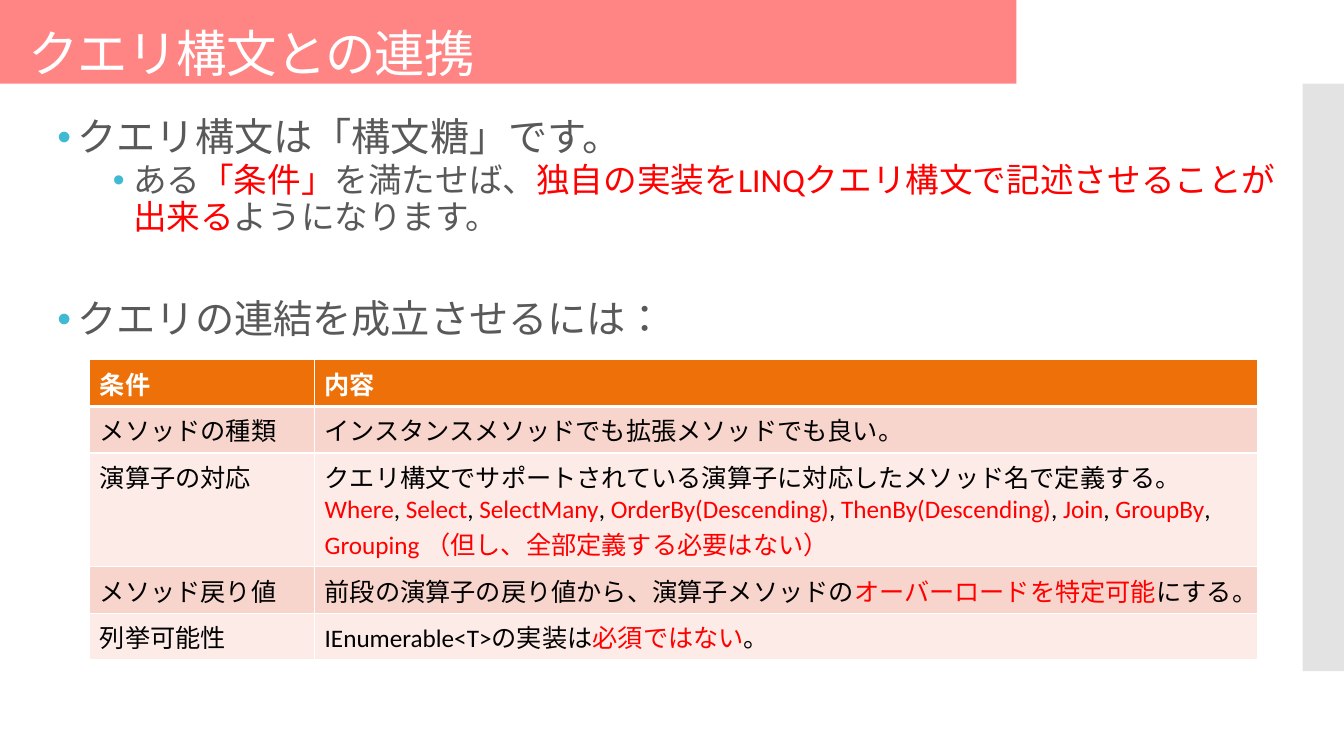
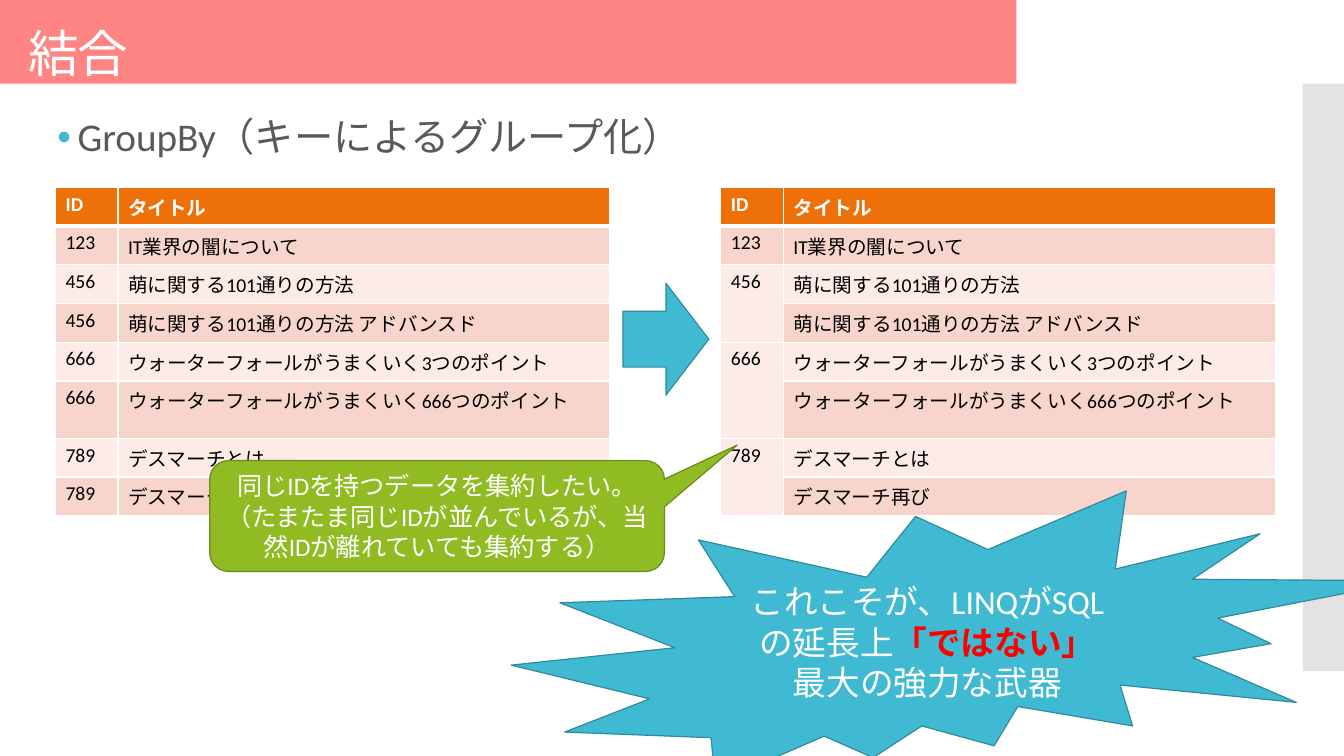
from pptx import Presentation
from pptx.dml.color import RGBColor
from pptx.enum.shapes import MSO_SHAPE
from pptx.enum.text import MSO_ANCHOR, MSO_AUTO_SIZE, PP_ALIGN
from pptx.oxml.ns import qn
from pptx.util import Emu, Pt
from lxml.etree import SubElement

EMU_PER_PX = 9144
FONT = "Calibri"
COLORS = {
    "white": "FFFFFF",
    "black": "000000",
    "text": "595959",
    "red": "FF0000",
    "band": "FF8585",
    "side": "C8C8C8",
    "header": "EE7008",
    "odd_row": "F8D5CC",
    "even_row": "FCEBE7",
    "blue": "40BAD2",
    "blue_line": "2F8A9B",
    "green": "90BB23",
    "green_line": "6B8A1A",
}
BULLETS = [
    {"size": 28, "margin": 20, "before": 12, "after": 0},
    {"size": 24, "margin": 75, "before": 2.5, "after": 2.5},
]
HANGING = 20

CONDITIONS = [
    ("条件", "内容"),
    ("メソッドの種類", "インスタンスメソッドでも拡張メソッドでも良い。"),
    ("演算子の対応",
     "クエリ構文でサポートされている演算子に対応したメソッド名で定義する。\n"
     "|Where|, |Select|, |SelectMany|, |OrderBy(Descending)|, "
     "|ThenBy(Descending)|, |Join|, |GroupBy|, "
     "|Grouping （但し、全部定義する必要はない）"),
    ("メソッド戻り値",
     "前段の演算子の戻り値から、演算子メソッドの|オーバーロードを特定可能|にする。"),
    ("列挙可能性", "IEnumerable<T>の実装は|必須ではない|。"),
]
BOOKS = [
    ("ID", "タイトル"),
    ("123", "IT業界の闇について"),
    ("456", "萌に関する101通りの方法"),
    ("456", "萌に関する101通りの方法 アドバンスド"),
    ("666", "ウォーターフォールがうまくいく3つのポイント"),
    ("666", "ウォーターフォールがうまくいく666つのポイント"),
    ("789", "デスマーチとは"),
    ("789", "デスマーチ再び"),
]


def px(length):
    return Emu(length * EMU_PER_PX)


def rgb(name):
    return RGBColor.from_string(COLORS[name])


def apply(target, formats):
    for name, value in formats.items():
        setattr(target, name, value)


def place(shape, box):
    apply(shape, dict(zip(("left", "top", "width", "height"), map(px, box))))


def write(paragraph, text, size, color, bold=False, red_bold=False):
    for index, part in enumerate(text.split("|")):
        is_red = index % 2 == 1
        for line_index, line in enumerate(part.split("\n")):
            if line_index:
                paragraph.add_line_break()
            if not line:
                continue
            run = paragraph.add_run()
            run.text = line
            apply(run.font, {"name": FONT, "size": Pt(size),
                             "bold": red_bold if is_red else bold})
            run.font.color.rgb = rgb("red" if is_red else color)
            run.font._element.set("lang", "ja-JP")


def add_shape(slide, kind, box, fill, line=None):
    shape = slide.shapes.add_shape(kind, *map(px, box))
    shape.shadow.inherit = False
    shape.fill.solid()
    shape.fill.fore_color.rgb = rgb(fill)
    if line:
        shape.line.color.rgb = rgb(line)
        shape.line.width = Pt(0.85)
    else:
        shape.line.fill.background()
    return shape


def add_label(shape, lines, size):
    frame = shape.text_frame
    apply(frame, {"word_wrap": True, "vertical_anchor": MSO_ANCHOR.MIDDLE})
    for index, line in enumerate(lines):
        paragraph = frame.add_paragraph() if index else frame.paragraphs[0]
        paragraph.alignment = PP_ALIGN.CENTER
        write(paragraph, line, size, "white", red_bold=True)


def add_bands(slide):
    title_band = add_shape(slide, MSO_SHAPE.RECTANGLE, (0, 0, 1008, 83), "band")
    side_band = add_shape(slide, MSO_SHAPE.RECTANGLE, (1292, 83, 42, 583), "side")
    side_color = side_band.element.xpath(".//a:srgbClr")[0]
    SubElement(side_color, qn("a:alpha")).set("val", "50000")
    layout_tree = slide.slide_layout.shapes.element
    for index, band in enumerate((title_band, side_band)):
        band.element.nvSpPr.cNvPr.set("id", str(100 + index))
        layout_tree.insert(2 + index, band.element)


def add_slide(presentation, title):
    slide = presentation.slides.add_slide(presentation.slide_layouts[1])
    shape = slide.shapes.title
    place(shape, (18, 14, 1248, 83))
    apply(shape.text_frame, {"word_wrap": True, "auto_size": MSO_AUTO_SIZE.NONE,
                             "vertical_anchor": MSO_ANCHOR.MIDDLE})
    paragraph = shape.text_frame.paragraphs[0]
    apply(paragraph, {"alignment": PP_ALIGN.LEFT, "line_spacing": 0.9})
    write(paragraph, title, 36, "white")
    paragraph.runs[0].font._element.set("spc", "-60")
    return slide


def add_bullet(paragraph, margin):
    properties = paragraph._p.get_or_add_pPr()
    properties.set("marL", str(px(margin)))
    properties.set("indent", str(-px(HANGING)))
    bullet_color = SubElement(properties, qn("a:buClr"))
    SubElement(bullet_color, qn("a:srgbClr")).set("val", COLORS["blue"])
    SubElement(properties, qn("a:buFont")).set("typeface", "Arial")
    SubElement(properties, qn("a:buChar")).set("char", "•")


def fill_body(slide, box, items):
    body = slide.placeholders[1]
    place(body, box)
    frame = body.text_frame
    apply(frame, {"word_wrap": True, "auto_size": MSO_AUTO_SIZE.NONE,
                  "vertical_anchor": MSO_ANCHOR.TOP})
    for index, (level, text, extra_space) in enumerate(items):
        style = BULLETS[level]
        paragraph = frame.add_paragraph() if index else frame.paragraphs[0]
        add_bullet(paragraph, style["margin"])
        before = style["before"] + extra_space if index else 0
        apply(paragraph, {"level": level, "line_spacing": 0.9,
                          "alignment": PP_ALIGN.LEFT,
                          "space_before": Pt(before),
                          "space_after": Pt(style["after"])})
        write(paragraph, text, style["size"], "text")


def format_cell(cell, row_index):
    widths = {"a:lnL": 1, "a:lnR": 1,
              "a:lnT": 3 if row_index == 1 else 1,
              "a:lnB": 3 if row_index == 0 else 1}
    properties = cell._tc.get_or_add_tcPr()
    for tag, width in widths.items():
        border = SubElement(properties, qn(tag), w=str(Pt(width)))
        border_fill = SubElement(border, qn("a:solidFill"))
        SubElement(border_fill, qn("a:srgbClr")).set("val", COLORS["white"])
    cell.fill.solid()
    fill = ("even_row", "odd_row")[row_index % 2] if row_index else "header"
    cell.fill.fore_color.rgb = rgb(fill)


def add_grid(slide, left, top, widths, heights, rows, size, grouped=False):
    table = slide.shapes.add_table(
        len(rows), len(widths), px(left), px(top),
        px(sum(widths)), px(sum(heights))).table
    table.horz_banding = False
    for column, width in zip(table.columns, widths):
        column.width = px(width)
    for row, height in zip(table.rows, heights):
        row.height = px(height)
    for row_index, texts in enumerate(rows):
        for column_index, text in enumerate(texts):
            cell = table.cell(row_index, column_index)
            format_cell(cell, row_index)
            if (grouped and row_index and column_index == 0
                    and text == rows[row_index - 1][0]):
                table.cell(row_index - 1, 0).merge(cell)
                continue
            is_header = row_index == 0
            write(cell.text_frame.paragraphs[0], text, size,
                  "white" if is_header else "black", bold=is_header)


def build_query_slide(presentation):
    slide = add_slide(presentation, "クエリ構文との連携")
    add_bands(slide)
    fill_body(slide, (47, 112, 1245, 246), [
        (0, "クエリ構文は「構文糖」です。", 0),
        (1, "ある|「条件」|を満たせば、|独自の実装をLINQクエリ構文で"
            "記述させることが出来る|ようになります。", 0),
        (0, "クエリの連結を成立させるには：", 31),
    ])
    add_grid(slide, 89, 357, (223, 935), [41] * len(CONDITIONS), CONDITIONS, 18)


def build_group_slide(presentation):
    slide = add_slide(presentation, "結合")
    fill_body(slide, (47, 112, 1218, 74),
              [(0, "GroupBy（キーによるグループ化）", 0)])
    heights = [32] * len(BOOKS)
    heights[5] = 57
    for left, grouped in ((55, False), (715, True)):
        add_grid(slide, left, 186, (62, 488), heights, BOOKS, 14, grouped)
    add_shape(slide, MSO_SHAPE.RIGHT_ARROW, (618, 281, 85, 111),
              "blue", "blue_line")
    burst = add_shape(slide, MSO_SHAPE.EXPLOSION2, (507, 487, 891, 290),
                      "blue", "blue_line")
    add_label(burst, ["これこそが、LINQがSQLの延長上|「ではない」|最大の強力な武器"], 24)
    callout = add_shape(slide, MSO_SHAPE.ROUNDED_RECTANGULAR_CALLOUT,
                        (208, 457, 451, 110), "green", "green_line")
    for index, value in enumerate((0.66, -0.64, 0.17)):
        callout.adjustments[index] = value
    add_label(callout, [
        "同じIDを持つデータを集約したい。",
        "（たまたま同じIDが並んでいるが、当然IDが離れていても集約する）",
    ], 18)


def main():
    presentation = Presentation()
    apply(presentation, {"slide_width": px(1333), "slide_height": px(750)})
    build_query_slide(presentation)
    build_group_slide(presentation)
    presentation.save("out.pptx")


if __name__ == "__main__":
    main()
